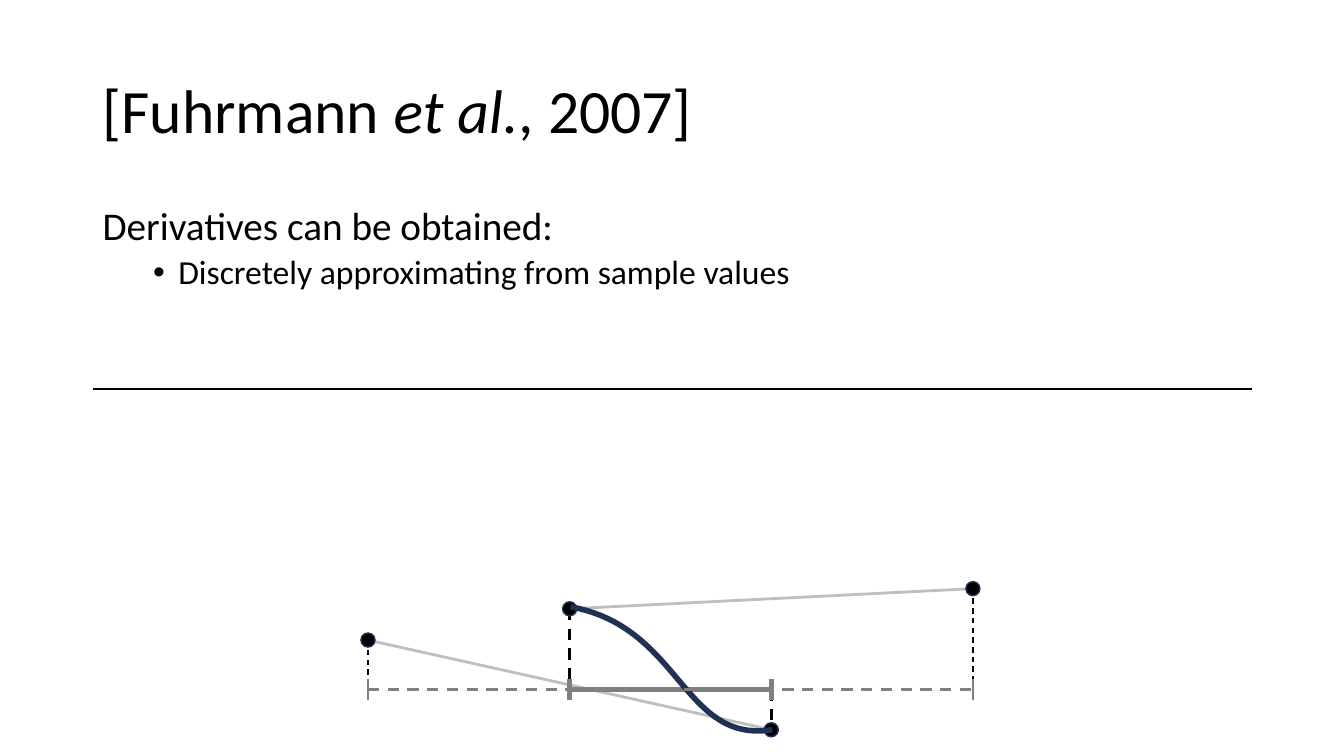
from lxml import etree
from pptx import Presentation
from pptx import util as u
from pptx.dml.color import RGBColor
from pptx.enum import dml, shapes, text
from pptx.oxml.ns import qn

FONT = "Calibri"
BLACK, NAVY, GRAY, PALE = "000000", "1E3256", "808080", "BFBFBF"
TITLE = [("[Fuhrmann ", False), ("et al.", True), (", 2007]", False)]
POINTS = [("Derivatives can be obtained:", 28, 0, False),
          ("Discretely approximating from sample values", 24, 5, True)]

WIDTH, HEIGHT = 13.33, 7.5
MARGIN, CONTENT = 0.92, 11.5
DIVIDER = 3.86
AXIS, TICK, DOT = 6.84, 0.1, 0.14
SAMPLE_XS = [3.65 + 2 * step for step in range(4)]
SAMPLE_YS = [6.35, 6.04, 7.24, 5.84]
STEM_WIDTHS = [1, 2, 2, 1]
SAMPLES = list(zip(SAMPLE_XS, SAMPLE_YS))
DOT_ORDER = [1, 0, 3, 2]
CURVE = [(5.66, 6.02), (6.76, 6.22), (6.77, 7.38), (7.66, 7.24)]
CURVE_STEPS = 40

deck = Presentation()
deck.slide_width, deck.slide_height = u.Inches(WIDTH), u.Inches(HEIGHT)
slide = deck.slides.add_slide(deck.slide_layouts[6])


def color(value):
    return RGBColor.from_string(value)


def stroke(line, value, points, dashed=False):
    line.color.rgb = color(value)
    line.width = u.Pt(points)
    if dashed:
        line.dash_style = dml.MSO_LINE.DASH


def segment(start, end, value, points, dashed=False):
    ends = [u.Inches(n) for n in (*start, *end)]
    link = slide.shapes.add_connector(shapes.MSO_CONNECTOR.STRAIGHT, *ends)
    stroke(link.line, value, points, dashed)
    etree.SubElement(link._element.spPr, qn("a:effectLst"))


def text_area(top, height, anchor):
    box = slide.shapes.add_textbox(*map(u.Inches, (MARGIN, top, CONTENT, height)))
    box.text_frame.word_wrap = True
    box.text_frame.vertical_anchor = anchor
    return box.text_frame


def style(run, size, italic=False):
    run.font.name, run.font.size = FONT, u.Pt(size)
    run.font.italic = italic
    run.font.color.rgb = color(BLACK)


def add_bullet(paragraph):
    props = paragraph._p.get_or_add_pPr()
    props.set("marL", str(u.Inches(0.75)))
    props.set("indent", str(u.Inches(-0.25)))
    etree.SubElement(props, qn("a:buFont"), typeface="Arial")
    etree.SubElement(props, qn("a:buChar"), char="•")


def bezier(t):
    weights = ((1 - t) ** 3, 3 * t * (1 - t) ** 2, 3 * t * t * (1 - t), t ** 3)
    return tuple(u.Inches(sum(w * p[axis] for w, p in zip(weights, CURVE)))
                 for axis in (0, 1))


def tick(x, points):
    segment((x, AXIS - TICK), (x, AXIS + TICK), GRAY, points)


segment(SAMPLES[0], SAMPLES[2], PALE, 2)
segment(SAMPLES[1], SAMPLES[3], PALE, 2)

body = text_area(2, 1.5, text.MSO_ANCHOR.TOP)
for index, (words, size, before, bulleted) in enumerate(POINTS):
    paragraph = body.add_paragraph() if index else body.paragraphs[0]
    paragraph.text = words
    paragraph.line_spacing = 0.9
    paragraph.space_before = u.Pt(before)
    if bulleted:
        paragraph.level = 1
        add_bullet(paragraph)
    style(paragraph.runs[0], size)

heading = text_area(0.4, 1.45, text.MSO_ANCHOR.MIDDLE).paragraphs[0]
heading.line_spacing = 0.9
for words, italic in TITLE:
    run = heading.add_run()
    run.text = words
    style(run, 44, italic)

segment((MARGIN, DIVIDER), (MARGIN + CONTENT, DIVIDER), BLACK, 2)

for (x, y), points in zip(SAMPLES, STEM_WIDTHS):
    segment((x, min(y, AXIS)), (x, max(y, AXIS)), BLACK, points, True)

for index in DOT_ORDER:
    x, y = SAMPLES[index]
    dot = slide.shapes.add_shape(
        shapes.MSO_SHAPE.OVAL,
        *map(u.Inches, (x - DOT / 2, y - DOT / 2, DOT, DOT)))
    dot.shadow.inherit = False
    dot.fill.solid()
    dot.fill.fore_color.rgb = color(BLACK)
    stroke(dot.line, NAVY, 1)

segment((SAMPLE_XS[1], AXIS), (SAMPLE_XS[2], AXIS), GRAY, 4)

trace = [bezier(step / CURVE_STEPS) for step in range(CURVE_STEPS + 1)]
builder = slide.shapes.build_freeform(*trace[0], scale=1.0)
builder.add_line_segments(trace[1:], close=False)
spline = builder.convert_to_shape()
spline.shadow.inherit = False
spline.fill.background()
stroke(spline.line, NAVY, 4)

for x in SAMPLE_XS[1:3]:
    tick(x, 4)
segment((SAMPLE_XS[0], AXIS), (SAMPLE_XS[3], AXIS), GRAY, 2, True)
for x in SAMPLE_XS[::3]:
    tick(x, 2)

deck.save("out.pptx")
